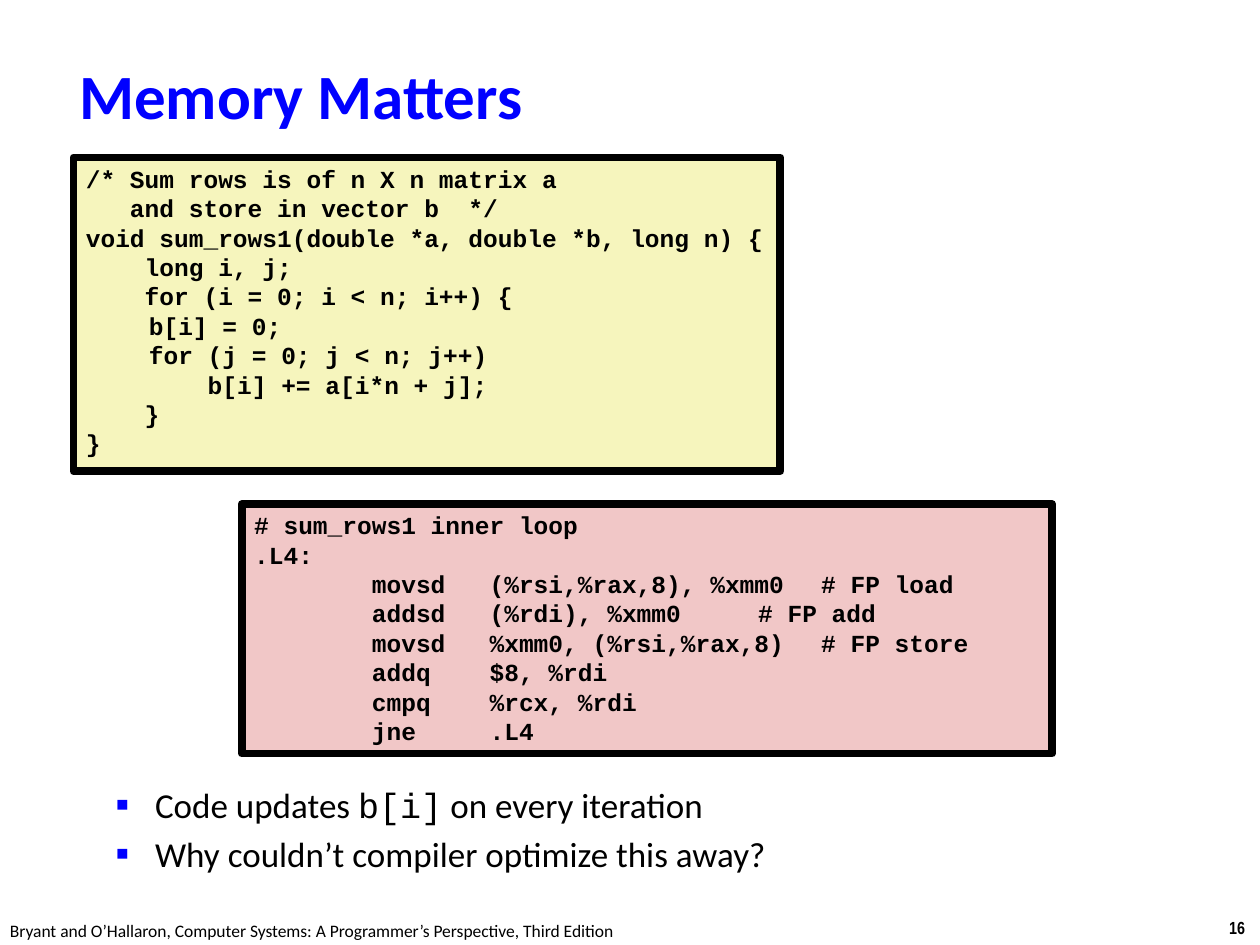
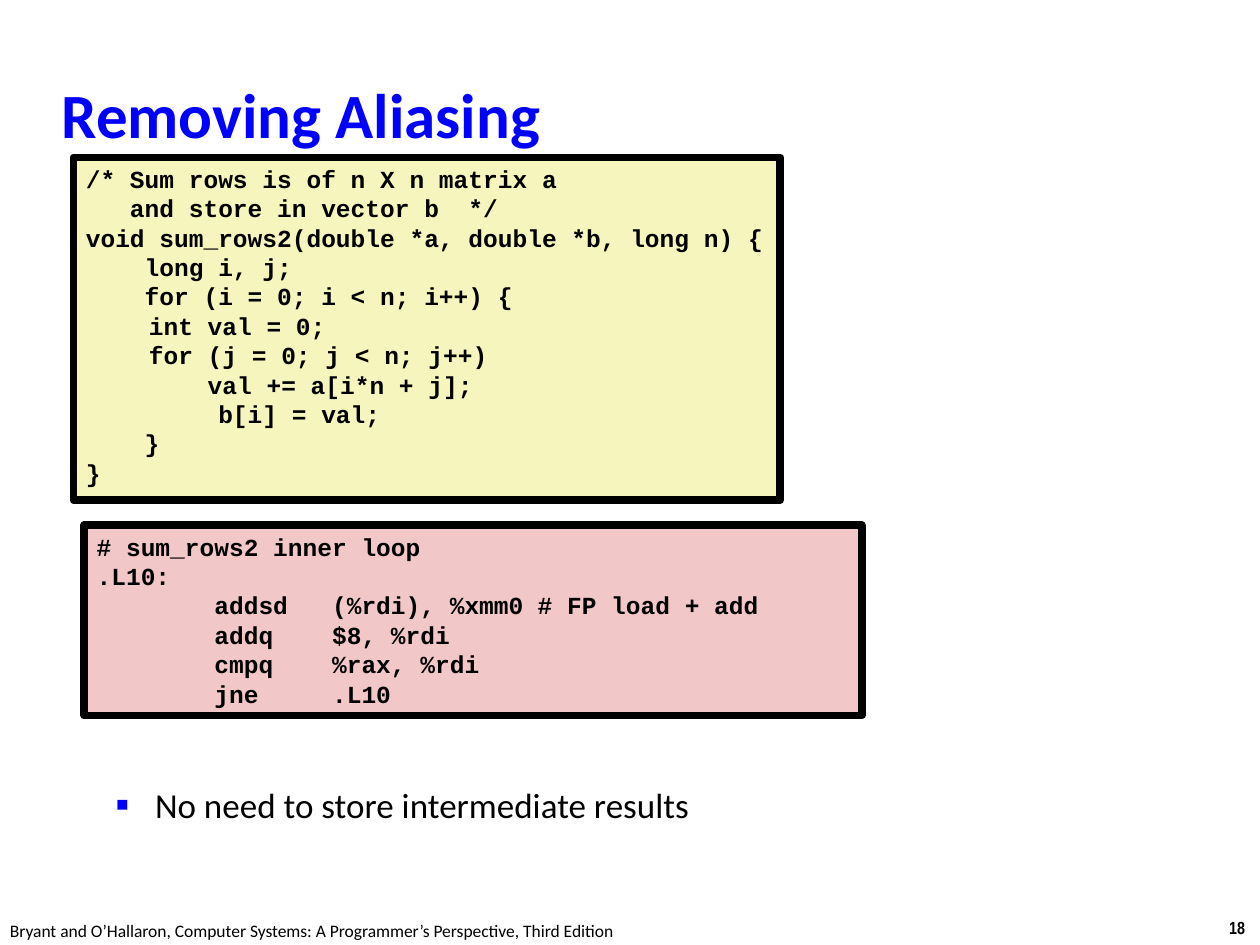
import pptx
import pptx.dml.color
import pptx.enum.shapes
import pptx.enum.text
import pptx.oxml
import pptx.util

Pt = pptx.util.Pt
RGBColor = pptx.dml.color.RGBColor
ANCHOR = pptx.enum.text.MSO_ANCHOR

BLACK = RGBColor(0, 0, 0)
BLUE = RGBColor(0x00, 0x00, 0xFF)
C_YELLOW = RGBColor(0xF6, 0xF5, 0xBD)
ASSEMBLY_PINK = RGBColor(0xF1, 0xC7, 0xC7)
NS = 'xmlns:a="http://schemas.openxmlformats.org/drawingml/2006/main"'
BULLET = (
    f'<a:buClr {NS}><a:srgbClr val="{BLUE}"/></a:buClr>',
    f'<a:buSzPct {NS} val="110000"/>',
    f'<a:buFont {NS} typeface="Wingdings"/>'.replace("Wingdings", "Calibri"),
    f'<a:buChar {NS} char="▪"/>',
)
FOOTER = ("Bryant and O’Hallaron, Computer Systems: "
          "A Programmer’s Perspective, Third Edition")

# Boxes are left, top, width, height in points; backticks mark code in bullets.
SLIDES = [
    {
        "number": "16",
        "title": "Memory Matters",
        "title_box": (38.2, 23.8, 597.6, 59.8),
        "bullets": ["Code updates `b[i]` on every iteration",
                    "Why couldn’t compiler optimize this away?"],
        "assembly_box": (138.2, 288, 463, 142.6),
        "assembly": """# sum_rows1 inner loop
.L4:
        movsd   (%rsi,%rax,8), %xmm0\t# FP load
        addsd   (%rdi), %xmm0\t\t# FP add
        movsd   %xmm0, (%rsi,%rax,8)\t# FP store
        addq    $8, %rdi
        cmpq    %rcx, %rdi
        jne     .L4""",
        "c_box": (42, 90, 404, 179.3),
        "c_code": """/* Sum rows is of n X n matrix a
   and store in vector b  */
void sum_rows1(double *a, double *b, long n) {
    long i, j;
    for (i = 0; i < n; i++) {
\tb[i] = 0;
\tfor (j = 0; j < n; j++)
\t    b[i] += a[i*n + j];
    }
}""",
    },
    {
        "number": "18",
        "title": "Removing Aliasing",
        "title_box": (28.1, 34.6, 597.6, 59.8),
        "bullets": ["No need to store intermediate results"],
        "assembly_box": (48.2, 300.2, 444.2, 108.7),
        "assembly": """# sum_rows2 inner loop
.L10:
        addsd   (%rdi), %xmm0\t# FP load + add
        addq    $8, %rdi
        cmpq    %rax, %rdi
        jne     .L10""",
        "c_box": (42, 90, 404, 195.8),
        "c_code": """/* Sum rows is of n X n matrix a
   and store in vector b  */
void sum_rows2(double *a, double *b, long n) {
    long i, j;
    for (i = 0; i < n; i++) {
\tint val = 0;
\tfor (j = 0; j < n; j++)
\t    val += a[i*n + j];
         b[i] = val;
    }
}""",
    },
]


def style_run(run, size, face="Calibri", color=BLACK, bold=False):
    run.font.size = Pt(size)
    run.font.name = face
    run.font.color.rgb = color
    run.font.bold = bold


def write_text(shape, text, size, face="Calibri", color=BLACK, bold=False,
               anchor=ANCHOR.TOP):
    """Fill a shape with left-aligned text, one paragraph per line."""
    frame = shape.text_frame
    frame.word_wrap = True
    frame.vertical_anchor = anchor
    frame.text = text
    for paragraph in frame.paragraphs:
        paragraph.alignment = pptx.enum.text.PP_ALIGN.LEFT
        for run in paragraph.runs:
            style_run(run, size, face, color, bold)


deck = pptx.Presentation()
deck.slide_width, deck.slide_height = Pt(720), Pt(540)

for content in SLIDES:
    slide = deck.slides.add_slide(deck.slide_layouts[6])
    shapes = slide.shapes

    page_number = shapes.add_textbox(Pt(695.3), Pt(520.6), Pt(24.7), Pt(19.4))
    write_text(page_number, content["number"], 10, "Arial Narrow", bold=True)
    footer = shapes.add_textbox(Pt(-1.4), Pt(522), Pt(366), Pt(19.4))
    write_text(footer, FOOTER, 10)

    title = shapes.add_textbox(*map(Pt, content["title_box"]))
    write_text(title, content["title"], 36, color=BLUE, bold=True,
               anchor=ANCHOR.MIDDLE)

    remarks = shapes.add_textbox(Pt(23), Pt(444.2), Pt(654.5), Pt(63.4))
    remarks.text_frame.word_wrap = True
    for index, remark in enumerate(content["bullets"]):
        frame = remarks.text_frame
        paragraph = frame.add_paragraph() if index else frame.paragraphs[0]
        paragraph.space_before = Pt(4)
        for part_index, part in enumerate(remark.split("`")):
            run = paragraph.add_run()
            run.text = part
            style_run(run, 20, "Courier New" if part_index % 2 else "Calibri")
        properties = paragraph._p.get_or_add_pPr()
        properties.set("marL", str(Pt(58.5)))
        properties.set("indent", str(Pt(-22.5)))
        for bullet_xml in BULLET:
            properties.append(pptx.oxml.parse_xml(bullet_xml))

    for listing, box, fill in (("assembly", "assembly_box", ASSEMBLY_PINK),
                               ("c_code", "c_box", C_YELLOW)):
        panel = shapes.add_shape(pptx.enum.shapes.MSO_SHAPE.RECTANGLE,
                                 *map(Pt, content[box]))
        panel.shadow.inherit = False
        panel.fill.solid()
        panel.fill.fore_color.rgb = fill
        panel.line.color.rgb = BLACK
        panel.line.width = Pt(4.5)
        write_text(panel, content[listing], 14, "Courier New", bold=True)

deck.save("out.pptx")
